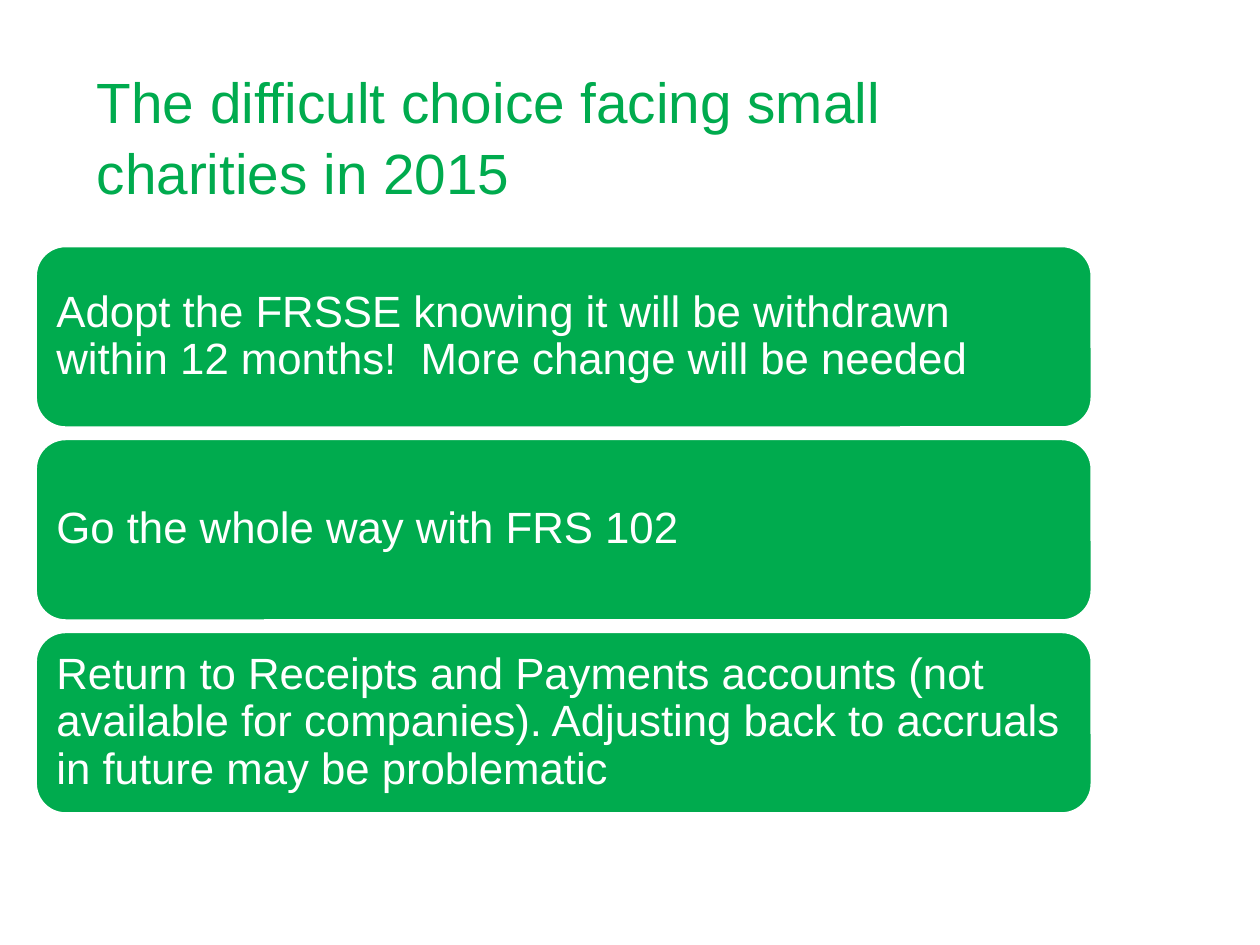
from pptx import Presentation
from pptx.dml.color import RGBColor as Rgb
from pptx.enum.shapes import MSO_SHAPE as Kind
from pptx.enum.text import MSO_ANCHOR as Anchor, PP_ALIGN as Align
from pptx.util import Cm, Pt

TITLE = "The difficult choice facing small charities in 2015"
CARDS = [
    "Adopt the FRSSE knowing it will be withdrawn within 12 months!  More change will be needed",
    "Go the whole way with FRS 102",
    "Return to Receipts and Payments accounts (not available for companies). "
    "Adjusting back to accruals in future may be problematic",
]
THEME = {
    "font": "Arial",
    "green": Rgb(0x00, 0xAB, 0x4E),
    "white": Rgb(0xFF, 0xFF, 0xFF),
    "title": Pt(32.4),
    "card": Pt(25),
    "line": Pt(2),
}
LEFT, TOP, WIDE, HIGH, GAP = 0.71, 4.95, 21.31, 3.68, 0.21
INSET = Cm(0.25)


def write(shape, text, size, color, space):
    frame = shape.text_frame
    frame.word_wrap = True
    frame.vertical_anchor = Anchor.MIDDLE
    frame.margin_left = frame.margin_right = INSET
    frame.margin_top = frame.margin_bottom = INSET
    para = frame.paragraphs[0]
    para.text = text
    para.alignment = Align.LEFT
    para.line_spacing = space
    para.font.name = THEME["font"]
    para.font.size = size
    para.font.color.rgb = color


def main():
    deck = Presentation()
    deck.slide_width, deck.slide_height = Cm(25.4), Cm(19.05)
    shapes = deck.slides.add_slide(deck.slide_layouts[6]).shapes

    title = shapes.add_textbox(Cm(1.7), Cm(1.12), Cm(20.12), Cm(3.2))
    write(title, TITLE, THEME["title"], THEME["green"], 1.04)

    for row, text in enumerate(CARDS):
        top = TOP + row * (HIGH + GAP)
        card = shapes.add_shape(
            Kind.ROUNDED_RECTANGLE, Cm(LEFT), Cm(top), Cm(WIDE), Cm(HIGH))
        card.shadow.inherit = False
        card.fill.solid()
        card.fill.fore_color.rgb = THEME["green"]
        card.line.color.rgb = THEME["white"]
        card.line.width = THEME["line"]
        write(card, text, THEME["card"], THEME["white"], 0.9)

    deck.save("out.pptx")


if __name__ == "__main__":
    main()
